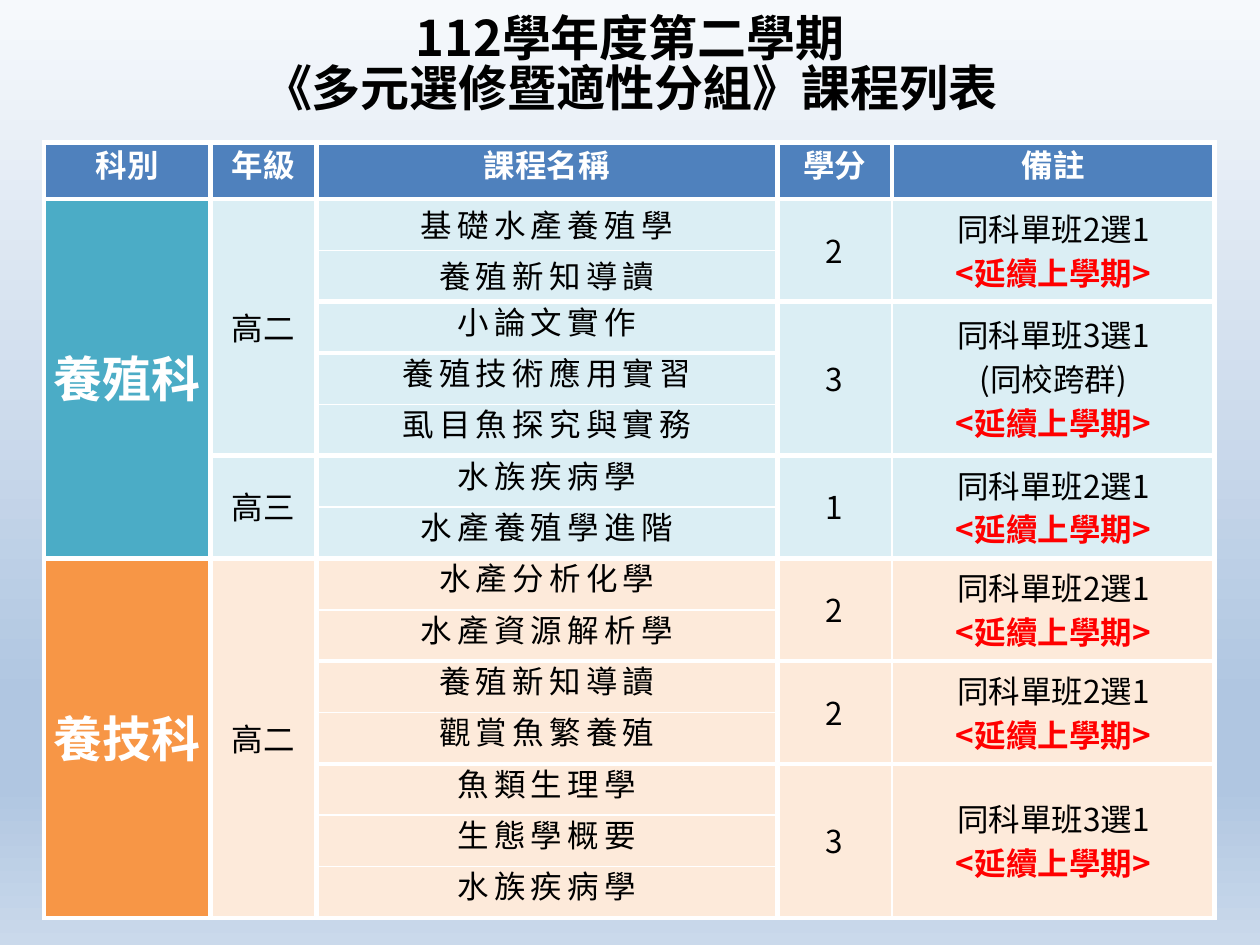
import pptx
import pptx.dml.color
import pptx.enum.text
import pptx.oxml
import pptx.oxml.ns
import pptx.util

FONT = "Noto Sans CJK SC"
BLACK, WHITE, RED, BLUE = "000000", "FFFFFF", "FF0000", "4F81BD"
THICK, THIN = 3, 1
HEADINGS = ["科別", "年級", "課程名稱", "學分", "備註"]
COLUMN_WIDTHS = [13.2, 8.4, 36.6, 9.1, 25.6]
HEADER_HEIGHT, TABLE_HEIGHT = 4.5, 61.6
TWO_CHOICES = "同科單班2選1\v<延續上學期>"
THREE_CHOICES = "同科單班3選1\v<延續上學期>"
SHARED_CHOICES = "同科單班3選1\n(同校跨群)\v<延續上學期>"
DEPARTMENTS = [
    ("養殖科", "4BACC6", "DBEEF4", [
        ("高二", [
            (["基礎水產養殖學", "養殖新知導讀"], "2", TWO_CHOICES),
            (["小論文實作", "養殖技術應用實習", "虱目魚探究與實務"], "3", SHARED_CHOICES),
        ]),
        ("高三", [(["水族疾病學", "水產養殖學進階"], "1", TWO_CHOICES)]),
    ]),
    ("養技科", "F79646", "FDEADA", [
        ("高二", [
            (["水產分析化學", "水產資源解析學"], "2", TWO_CHOICES),
            (["養殖新知導讀", "觀賞魚繁養殖"], "2", TWO_CHOICES),
            (["魚類生理學", "生態學概要", "水族疾病學"], "3", THREE_CHOICES),
        ]),
    ]),
]


def color(hex_text):
    return pptx.dml.color.RGBColor.from_string(hex_text)


class SlideWriter:
    def __init__(self, presentation, columns=100, rows=75):
        self.slide = presentation.slides.add_slide(presentation.slide_layouts[6])
        self.column = presentation.slide_width / columns
        self.row = presentation.slide_height / rows

    def across(self, count):
        return pptx.util.Emu(round(count * self.column))

    def down(self, count):
        return pptx.util.Emu(round(count * self.row))

    def background(self, stops):
        stop_xml = "".join(
            f'<a:gs pos="{position * 1000}"><a:srgbClr val="{shade}"/></a:gs>'
            for position, shade in stops)
        self.slide.element.cSld.insert(0, pptx.oxml.parse_xml(
            f'<p:bg {pptx.oxml.ns.nsdecls("p", "a")}><p:bgPr><a:gradFill rotWithShape="1">'
            f'<a:gsLst>{stop_xml}</a:gsLst><a:lin ang="5400000" scaled="0"/>'
            '</a:gradFill><a:effectLst/></p:bgPr></p:bg>'))

    def text(self, text_frame, content, size, shade, bold, line_spacing, tracking=0):
        text_frame.text = content
        for paragraph in text_frame.paragraphs:
            paragraph.alignment = pptx.enum.text.PP_ALIGN.CENTER
            paragraph.line_spacing = line_spacing
            for run in paragraph.runs:
                marked = run.text.startswith("<")
                run.font.name = FONT
                run.font.size = pptx.util.Pt(size)
                run.font.bold = bold or marked
                run.font.color.rgb = color(RED if marked else shade)
                properties = run.font._element
                properties.append(pptx.oxml.parse_xml(
                    f'<a:ea {pptx.oxml.ns.nsdecls("a")} typeface="{FONT}"/>'))
                if tracking:
                    properties.set("spc", str(tracking * 100))

    def title(self, content, left, top, width, height):
        shape = self.slide.shapes.add_textbox(
            self.across(left), self.down(top), self.across(width), self.down(height))
        shape.text_frame.word_wrap = True
        shape.text_frame.vertical_anchor = pptx.enum.text.MSO_ANCHOR.MIDDLE
        self.text(shape.text_frame, content, 28, BLACK, True, 0.85)

    def table(self, row_count, left, top):
        shape = self.slide.shapes.add_table(
            row_count, len(COLUMN_WIDTHS), self.across(left), self.down(top),
            self.across(sum(COLUMN_WIDTHS)), self.down(TABLE_HEIGHT))
        table = shape.table
        table.first_row = table.horz_banding = False
        for column, width in zip(table.columns, COLUMN_WIDTHS):
            column.width = self.across(width)
        course_height = (TABLE_HEIGHT - HEADER_HEIGHT) / (row_count - 1)
        for index, row in enumerate(table.rows):
            row.height = self.down(course_height if index else HEADER_HEIGHT)
        return table

    def cell(self, table, row, column, content, fill, size=18, shade=BLACK, bold=False,
             spacing=25, tracking=0, span=1, margin=0, **edges):
        for offset in range(span):
            part = table.cell(row + offset, column)
            part.margin_top = part.margin_bottom = 0
            part.margin_left = part.margin_right = self.across(margin)
            part.vertical_anchor = pptx.enum.text.MSO_ANCHOR.MIDDLE
            properties = part._tc.get_or_add_tcPr()
            for side in "LRTB":
                width = pptx.util.Pt(edges.get(side, THICK))
                properties.append(pptx.oxml.parse_xml(
                    f'<a:ln{side} {pptx.oxml.ns.nsdecls("a")} w="{width}"><a:solidFill>'
                    f'<a:srgbClr val="{WHITE}"/></a:solidFill></a:ln{side}>'))
            part.fill.solid()
            part.fill.fore_color.rgb = color(fill)
        origin = table.cell(row, column)
        if span > 1:
            origin.merge(table.cell(row + span - 1, column))
        self.text(origin.text_frame, content, size, shade, bold,
                  pptx.util.Pt(spacing), tracking)


def count_courses(groups):
    return sum(len(courses) for courses, _, _ in groups)


def fill_group(writer, table, row, courses, credit, note, light):
    span = len(courses)
    for index, course in enumerate(courses):
        after_essay = index > 0 and courses[index - 1] == "小論文實作"
        writer.cell(
            table, row + index, 2, course, light, tracking=3, margin=0.7,
            spacing=25 if row == 1 else 18,
            T=THIN if index and not after_essay else THICK,
            B=THIN if index < span - 1 and course != "小論文實作" else THICK)
    writer.cell(table, row, 3, credit, light, span=span, R=THIN)
    writer.cell(table, row, 4, note, light, span=span, L=THIN)


def main():
    presentation = pptx.Presentation()
    presentation.slide_width = pptx.util.Inches(10)
    presentation.slide_height = pptx.util.Inches(7.5)
    writer = SlideWriter(presentation)
    writer.background([(0, "F6F9FC"), (74, "B0C6E1"), (83, "B0C6E1"), (100, "CAD9EB")])
    writer.title("112學年度第二學期\v《多元選修暨適性分組》課程列表", 5.9, 0.2, 88.2, 10.2)

    course_count = sum(count_courses(groups) for *_, grades in DEPARTMENTS
                       for _, groups in grades)
    table = writer.table(course_count + 1, 3.5, 11.3)
    for column, heading in enumerate(HEADINGS):
        writer.cell(table, 0, column, heading, BLUE, shade=WHITE, bold=True, spacing=18)
    row = 1
    for department, dark, light, grades in DEPARTMENTS:
        department_span = sum(count_courses(groups) for _, groups in grades)
        writer.cell(table, row, 0, department, dark, size=28, shade=WHITE, bold=True,
                    spacing=38, span=department_span)
        for grade, groups in grades:
            writer.cell(table, row, 1, grade, light, span=count_courses(groups))
            for courses, credit, note in groups:
                fill_group(writer, table, row, courses, credit, note, light)
                row += len(courses)
    presentation.save("out.pptx")


if __name__ == "__main__":
    main()
